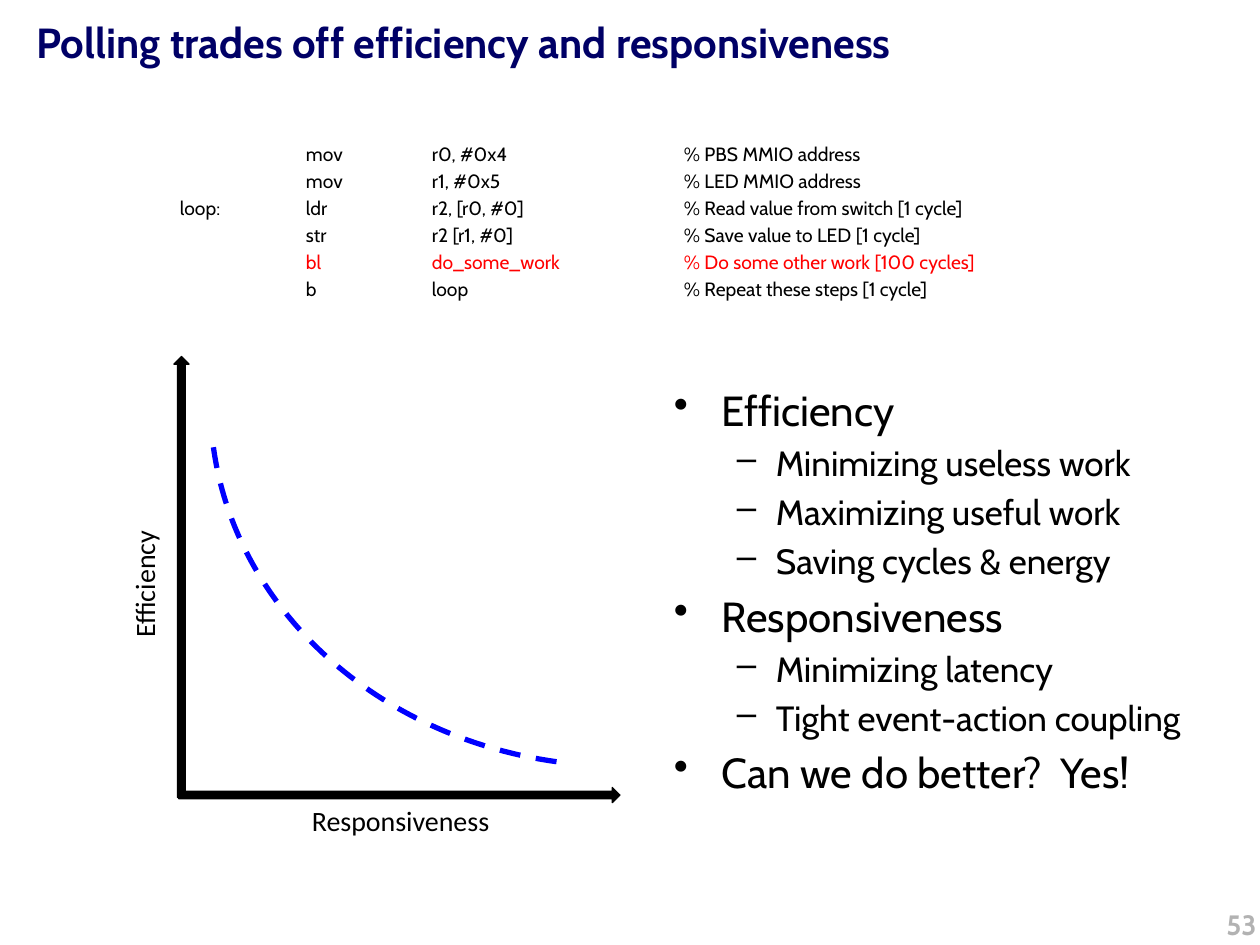
from dataclasses import dataclass
from typing import NamedTuple, Optional

from lxml import etree
from pptx import Presentation
from pptx import util as u
from pptx.dml.color import RGBColor
from pptx.enum import dml, shapes, text
from pptx.oxml.ns import qn


@dataclass(frozen=True)
class Theme:
    heading_font: str = "Cabin"
    axis_font: str = "Calibri"
    ink: str = "000000"
    title: str = "000066"
    number: str = "B2B2B2"
    highlight: str = "FF0000"
    curve: str = "0000FF"
    title_size: float = 24
    axis_size: float = 16
    number_size: float = 16
    code_size: float = 11
    point_sizes: tuple = (24, 20)
    space_ratio: float = 0.2


class Box(NamedTuple):
    left: float
    top: float
    width: float
    height: float

    def lengths(self):
        return [u.Inches(side) for side in self]


class Style(NamedTuple):
    size: float
    color: str
    font: str = "Cabin"
    bold: bool = False


class Instruction(NamedTuple):
    label: str
    opcode: str
    operands: str
    comment: str
    highlighted: bool = False


class Point(NamedTuple):
    level: int
    words: str


class Axis(NamedTuple):
    arrow: Box
    label: Box
    words: str
    rotation: float


class Bullet(NamedTuple):
    symbol: str
    margin: float
    hanging: float


THEME = Theme()
CODE_TABS = (1, 2, 4)
BULLETS = (Bullet("•", 0.38, 0.38), Bullet("–", 0.81, 0.31))

PROGRAM = [
    Instruction("", "mov", "r0, #0x4", "% PBS MMIO address"),
    Instruction("", "mov", "r1, #0x5", "% LED MMIO address"),
    Instruction("loop:", "ldr", "r2, [r0, #0]", "% Read value from switch [1 cycle]"),
    Instruction("", "str", "r2 [r1, #0]", "% Save value to LED [1 cycle]"),
    Instruction("", "bl", "do_some_work", "% Do some other work [100 cycles]", True),
    Instruction("", "b", "loop", "% Repeat these steps [1 cycle]"),
]

POINTS = [
    Point(0, "Efficiency"),
    Point(1, "Minimizing useless work"),
    Point(1, "Maximizing useful work"),
    Point(1, "Saving cycles & energy"),
    Point(0, "Responsiveness"),
    Point(1, "Minimizing latency"),
    Point(1, "Tight event-action coupling"),
    Point(0, "Can we do better?  Yes!"),
]

AXES = [
    Axis(Box(1.42, 6.25, 3.5, 0.12), Box(2.36, 6.33, 1.64, 0.37), "Responsiveness", 0),
    Axis(Box(-0.31, 4.52, 3.5, 0.12), Box(0.61, 4.45, 1.07, 0.37), "Efficiency", 270),
]


def add_text_box(slide, box: Box, wrap: bool = True):
    area = slide.shapes.add_textbox(*box.lengths())
    area.text_frame.word_wrap = wrap
    return area


def add_run(paragraph, words: str, style: Style) -> None:
    run = paragraph.add_run()
    run.text = words
    run.font.name = style.font
    run.font.size = u.Pt(style.size)
    run.font.bold = style.bold
    run.font.color.rgb = RGBColor.from_string(style.color)


def next_paragraph(frame, index: int, size: float):
    if index == 0:
        return frame.paragraphs[0]
    paragraph = frame.add_paragraph()
    paragraph.space_before = u.Pt(size * THEME.space_ratio)
    return paragraph


def add_line_of_text(slide, box: Box, words: str, style: Style,
                     align: Optional[text.PP_ALIGN] = None, wrap: bool = True):
    area = add_text_box(slide, box, wrap)
    paragraph = area.text_frame.paragraphs[0]
    paragraph.alignment = align
    add_run(paragraph, words, style)
    return area


def set_tabs(paragraph) -> None:
    stops = etree.SubElement(paragraph._p.get_or_add_pPr(), qn("a:tabLst"))
    for position in CODE_TABS:
        etree.SubElement(stops, qn("a:tab"), pos=str(u.Inches(position)), algn="l")


def set_bullet(paragraph, bullet: Bullet) -> None:
    properties = paragraph._p.get_or_add_pPr()
    properties.set("marL", str(u.Inches(bullet.margin)))
    properties.set("indent", str(-u.Inches(bullet.hanging)))
    etree.SubElement(properties, qn("a:buChar"), char=bullet.symbol)


def draw_program(slide, box: Box) -> None:
    frame = add_text_box(slide, box).text_frame
    for index, step in enumerate(PROGRAM):
        paragraph = next_paragraph(frame, index, THEME.code_size)
        set_tabs(paragraph)
        color = THEME.highlight if step.highlighted else THEME.ink
        add_run(paragraph, "\t".join(step[:4]), Style(THEME.code_size, color))


def draw_points(slide, box: Box) -> None:
    frame = add_text_box(slide, box).text_frame
    for index, point in enumerate(POINTS):
        size = THEME.point_sizes[point.level]
        paragraph = next_paragraph(frame, index, size)
        paragraph.level = point.level
        set_bullet(paragraph, BULLETS[point.level])
        add_run(paragraph, point.words, Style(size, THEME.ink))


def draw_axis(slide, axis: Axis) -> None:
    arrow = slide.shapes.add_shape(shapes.MSO_SHAPE.RIGHT_ARROW, *axis.arrow.lengths())
    arrow.rotation = axis.rotation
    arrow.shadow.inherit = False
    arrow.fill.solid()
    arrow.fill.fore_color.rgb = RGBColor.from_string(THEME.ink)
    arrow.line.color.rgb = RGBColor.from_string(THEME.ink)
    arrow.line.width = u.Pt(0.75)
    label = add_line_of_text(slide, axis.label, axis.words,
                             Style(THEME.axis_size, THEME.ink, THEME.axis_font),
                             text.PP_ALIGN.CENTER, wrap=False)
    label.rotation = axis.rotation


def draw_tradeoff_curve(slide, box: Box) -> None:
    curve = slide.shapes.add_shape(shapes.MSO_SHAPE.ARC, *box.lengths())
    curve.adjustments[0], curve.adjustments[1] = 168.03, 212.82
    curve.rotation = 180
    curve.shadow.inherit = False
    curve.fill.background()
    curve.line.color.rgb = RGBColor.from_string(THEME.curve)
    curve.line.width = u.Pt(3)
    curve.line.dash_style = dml.MSO_LINE.DASH


def main() -> None:
    deck = Presentation()
    deck.slide_width, deck.slide_height = u.Inches(10), u.Inches(7.5)
    slide = deck.slides.add_slide(deck.slide_layouts[6])
    add_line_of_text(slide, Box(6.9, 7.15, 3.17, 0.5), "53",
                     Style(THEME.number_size, THEME.number, bold=True), text.PP_ALIGN.RIGHT)
    add_line_of_text(slide, Box(0.19, 0.08, 9.71, 1),
                     "Polling trades off efficiency and responsiveness",
                     Style(THEME.title_size, THEME.title, bold=True))
    draw_program(slide, Box(1.33, 1.08, 6.83, 1.67))
    for axis in AXES:
        draw_axis(slide, axis)
    draw_points(slide, Box(5.25, 3, 4.67, 3.75))
    draw_tradeoff_curve(slide, Box(1.67, 0.33, 6.5, 5.75))
    deck.save("out.pptx")


if __name__ == "__main__":
    main()
